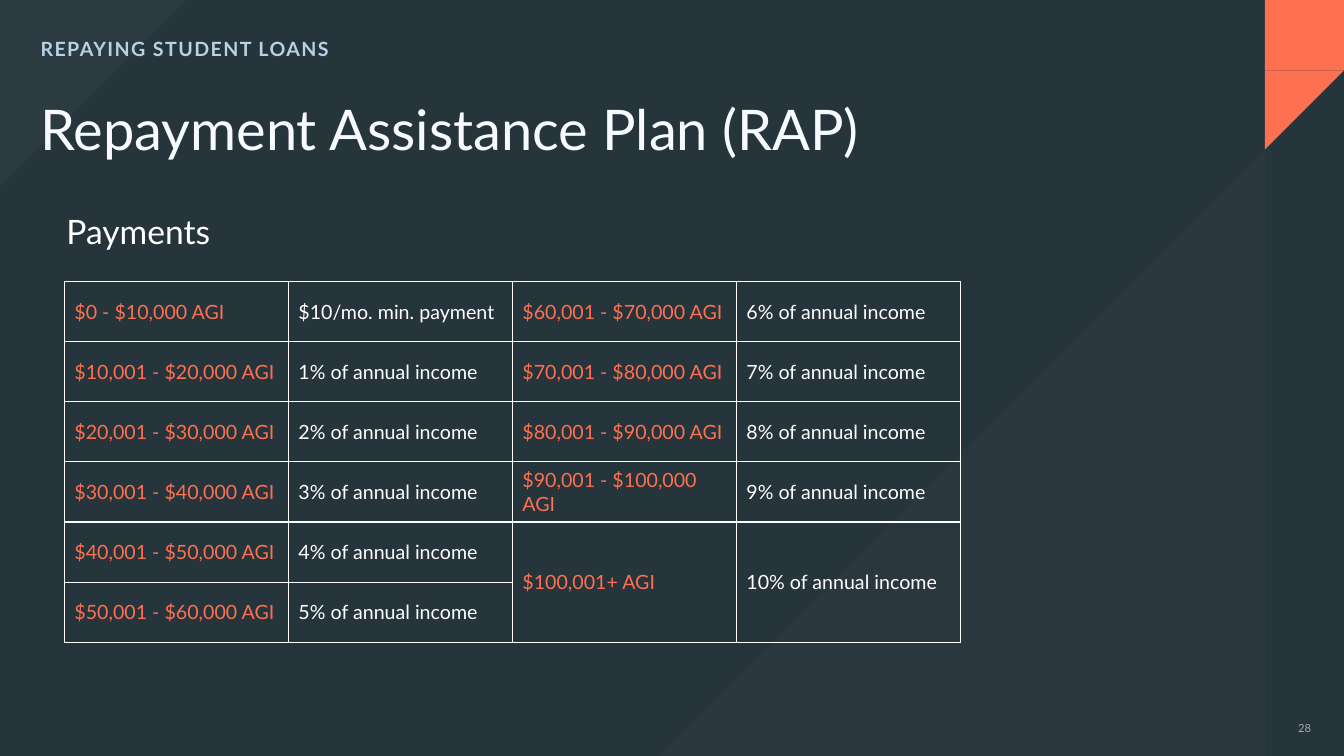
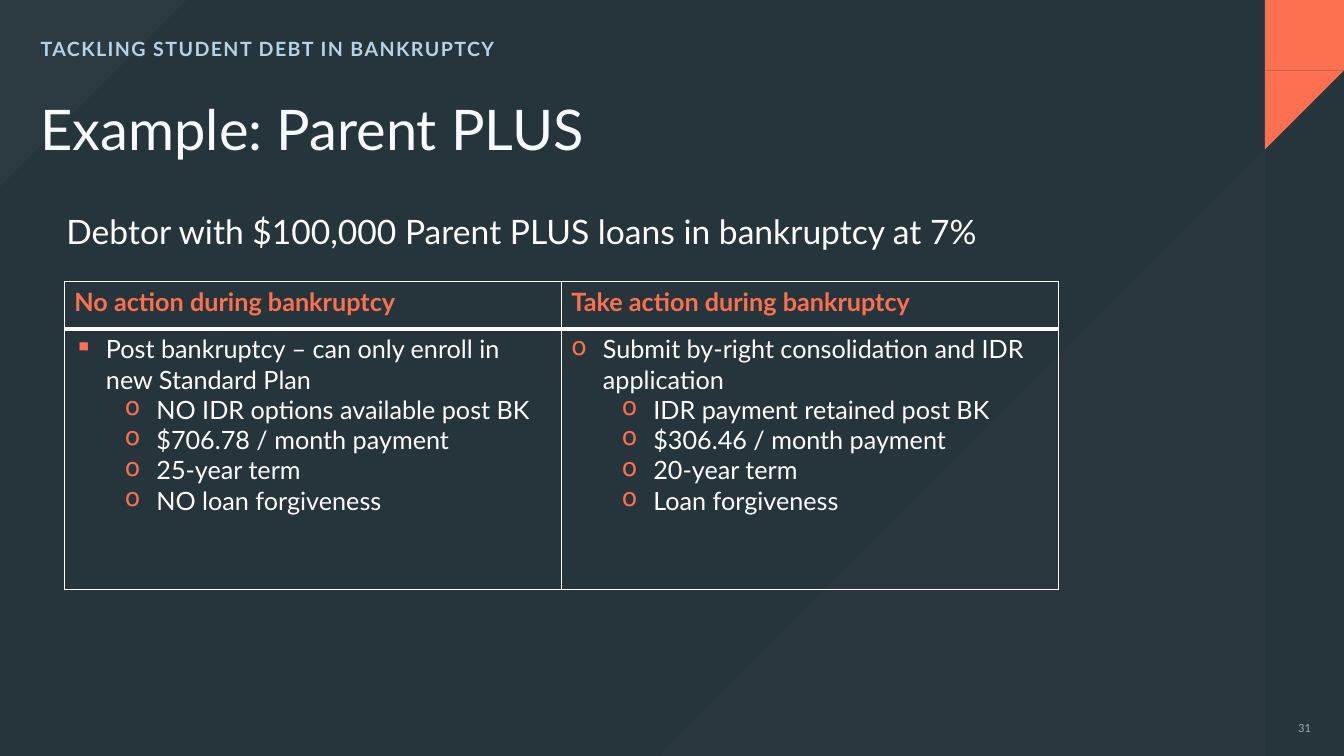
from dataclasses import dataclass

from lxml.etree import SubElement
from pptx import Presentation
from pptx.dml.color import RGBColor
from pptx.enum.shapes import MSO_SHAPE as Preset
from pptx.enum.text import MSO_ANCHOR as Anchor, PP_ALIGN as Align
from pptx.oxml.ns import qn
from pptx.util import Pt


@dataclass(frozen=True)
class Theme:
    font: str = "Lato"
    background: str = "26343B"
    pale: str = "F7FAFF"
    white: str = "FFFFFF"
    coral: str = "FD7150"
    blue: str = "B7D2E5"
    title_size: int = 40
    subtitle_size: int = 24
    list_size: int = 18
    small_size: int = 14
    number_size: int = 8


theme = Theme()


def set_opacity(element, percent):
    color = element.find(".//" + qn("a:srgbClr"))
    SubElement(color, qn("a:alpha")).set("val", str(percent * 1000))


def write_text(frame, text, size, color=theme.white, bold=False, align=Align.LEFT,
               line_spacing=None, tracking=0, opacity=100, bullet=None, indent=0):
    paragraph = frame.paragraphs[0]
    if paragraph.runs:
        paragraph = frame.add_paragraph()
    paragraph.alignment = align
    if line_spacing:
        paragraph.line_spacing = line_spacing
    if bullet:
        properties = paragraph._p.get_or_add_pPr()
        properties.set("marL", str(Pt(indent)))
        properties.set("indent", str(-Pt(22.5)))
        bullet_color = SubElement(properties, qn("a:buClr"))
        SubElement(bullet_color, qn("a:srgbClr")).set("val", theme.coral)
        SubElement(properties, qn("a:buChar")).set("char", bullet)
    run = paragraph.add_run()
    run.text = text
    run.font.name = theme.font
    run.font.size = Pt(size)
    run.font.bold = bold
    run.font.color.rgb = RGBColor.from_string(color)
    if tracking:
        run.font._element.set("spc", str(tracking * 100))
    if opacity < 100:
        set_opacity(run.font._element, opacity)


label = dict(size=theme.small_size, color=theme.coral)
value = dict(size=theme.small_size)
heading = dict(size=theme.list_size, color=theme.coral, bold=True)
point = dict(size=theme.list_size, indent=22.5)
detail = dict(size=theme.list_size, indent=58.5, bullet="o")

payment_rows = [
    ("$0 - $10,000 AGI", "$10/mo. min. payment", "$60,001 - $70,000 AGI", "6% of annual income"),
    ("$10,001 - $20,000 AGI", "1% of annual income", "$70,001 - $80,000 AGI", "7% of annual income"),
    ("$20,001 - $30,000 AGI", "2% of annual income", "$80,001 - $90,000 AGI", "8% of annual income"),
    ("$30,001 - $40,000 AGI", "3% of annual income", "$90,001 - $100,000 AGI", "9% of annual income"),
    ("$40,001 - $50,000 AGI", "4% of annual income", "$100,001+ AGI", "10% of annual income"),
    ("$50,001 - $60,000 AGI", "5% of annual income"),
]
payment_cells = [
    [[(text, value if column % 2 else label)] for column, text in enumerate(row)]
    for row in payment_rows
]

no_action = ["NO IDR options available post BK", "$706.78 / month payment",
             "25-year term", "NO loan forgiveness"]
take_action = ["IDR payment retained post BK", "$306.46 / month payment",
               "20-year term", "Loan forgiveness"]
comparison_cells = [
    [[("No action during bankruptcy", heading)], [("Take action during bankruptcy", heading)]],
    [
        [("Post bankruptcy – can only enroll in new Standard Plan", point | {"bullet": "▪"})]
        + [(text, detail) for text in no_action],
        [("Submit by-right consolidation and IDR application", point | {"bullet": "o"})]
        + [(text, detail) for text in take_action],
    ],
]

pages = [
    dict(section="REPAYING STUDENT LOANS", title="Repayment Assistance Plan (RAP)",
         subtitle="Payments", number="28", cells=payment_cells,
         widths=[160] * 4, heights=[43] * 6, anchor=Anchor.MIDDLE,
         header_line=1, merges=[(4, 2, 5, 2), (4, 3, 5, 3)]),
    dict(section="TACKLING STUDENT DEBT IN BANKRUPTCY", title="Example: Parent PLUS",
         subtitle="Debtor with $100,000 Parent PLUS loans in bankruptcy at 7%",
         number="31", cells=comparison_cells,
         widths=[355] * 2, heights=[34, 186], anchor=Anchor.TOP,
         header_line=3, merges=[]),
]

decorations = [
    (Preset.ISOSCELES_TRIANGLE, 0, 0, 133, 133, 180, theme.pale, 3),
    (Preset.RECTANGLE, 903.5, 0, 56.5, 50.25, 0, theme.coral, 100),
    (Preset.ISOSCELES_TRIANGLE, 903.5, 50.25, 56.5, 56.5, 180, theme.coral, 100),
    (Preset.ISOSCELES_TRIANGLE, 470, 106.5, 433.5, 433.5, 0, theme.pale, 2),
]

presentation = Presentation()
presentation.slide_width = Pt(960)
presentation.slide_height = Pt(540)

for page in pages:
    slide = presentation.slides.add_slide(presentation.slide_layouts[6])
    slide.background.fill.solid()
    slide.background.fill.fore_color.rgb = RGBColor.from_string(theme.background)

    for preset, left, top, width, height, rotation, color, opacity in decorations:
        shape = slide.shapes.add_shape(preset, Pt(left), Pt(top), Pt(width), Pt(height))
        if preset == Preset.ISOSCELES_TRIANGLE:
            shape.adjustments[0] = 1
        shape.rotation = rotation
        shape.shadow.inherit = False
        shape.line.fill.background()
        shape.fill.solid()
        shape.fill.fore_color.rgb = RGBColor.from_string(color)
        if opacity < 100:
            set_opacity(shape._element.spPr, opacity)

    text_boxes = [
        (page["title"], 29, 50.5, 864, 90, Anchor.MIDDLE,
         dict(size=theme.title_size, color=theme.pale, line_spacing=0.85)),
        (page["subtitle"], 47.5, 151, 845, 36, Anchor.TOP, dict(size=theme.subtitle_size)),
        (page["section"], 29, 26, 864, 17, Anchor.MIDDLE,
         dict(size=theme.small_size, color=theme.blue, bold=True, tracking=1)),
        (page["number"], 924.5, 511, 15, 18, Anchor.MIDDLE,
         dict(size=theme.number_size, color=theme.pale, align=Align.CENTER, opacity=60)),
    ]
    for text, left, top, width, height, anchor, text_format in text_boxes:
        frame = slide.shapes.add_textbox(Pt(left), Pt(top), Pt(width), Pt(height)).text_frame
        frame.word_wrap = True
        frame.vertical_anchor = anchor
        frame.margin_left = frame.margin_right = frame.margin_top = frame.margin_bottom = 0
        write_text(frame, text, **text_format)

    widths, heights = page["widths"], page["heights"]
    table = slide.shapes.add_table(len(heights), len(widths), Pt(46), Pt(201),
                                   Pt(sum(widths)), Pt(sum(heights))).table
    table.first_row = False
    table.horz_banding = False
    for column, width in zip(table.columns, widths):
        column.width = Pt(width)
    for row_index, height in enumerate(heights):
        table.rows[row_index].height = Pt(height)
        for cell in table.rows[row_index].cells:
            cell.vertical_anchor = page["anchor"]
            properties = cell._tc.get_or_add_tcPr()
            for side in ("lnL", "lnR", "lnT", "lnB"):
                under_header = (row_index, side) in ((0, "lnB"), (1, "lnT"))
                border = SubElement(properties, qn("a:" + side))
                border.set("w", str(Pt(page["header_line"] if under_header else 1)))
                line_fill = SubElement(border, qn("a:solidFill"))
                SubElement(line_fill, qn("a:srgbClr")).set("val", theme.white)
            cell.fill.background()
    for first_row, first_column, last_row, last_column in page["merges"]:
        table.cell(first_row, first_column).merge(table.cell(last_row, last_column))
    for row_index, row in enumerate(page["cells"]):
        for column_index, paragraphs in enumerate(row):
            for text, text_format in paragraphs:
                write_text(table.cell(row_index, column_index).text_frame, text, **text_format)

presentation.save("out.pptx")
